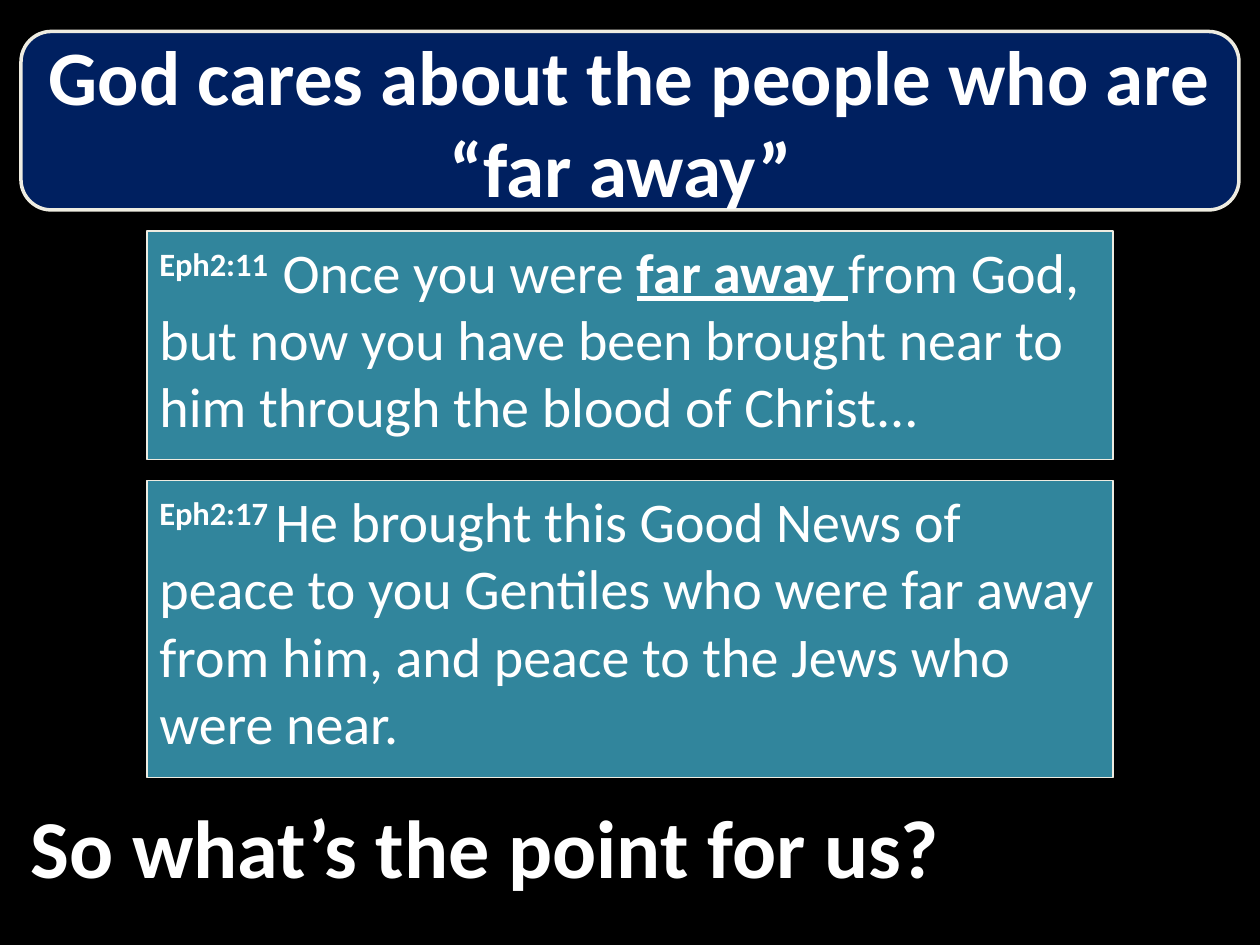
from pptx import Presentation
from pptx.dml.color import RGBColor
from pptx.enum.shapes import MSO_SHAPE as Shape
from pptx.enum.text import MSO_ANCHOR as Anchor, PP_ALIGN as Align
from pptx.util import Pt

COLORS = {
    "background": "000000",
    "banner": "002060",
    "verse": "31859C",
    "border": "EEECE1",
    "text": "FFFFFF",
}
FONT = "Calibri"


def color(name):
    return RGBColor.from_string(COLORS[name])


def add_box(slide, kind, box, fill=None, line_width=0):
    shape = slide.shapes.add_shape(kind, *(Pt(length) for length in box))
    shape.shadow.inherit = False
    if fill:
        shape.fill.solid()
        shape.fill.fore_color.rgb = color(fill)
        shape.line.color.rgb = color("border")
        shape.line.width = Pt(line_width)
    else:
        shape.fill.background()
        shape.line.fill.background()
    shape.text_frame.word_wrap = True
    return shape


def style_paragraph(paragraph, size, align, bold):
    paragraph.alignment = align
    paragraph.font.name = FONT
    paragraph.font.size = Pt(size)
    paragraph.font.bold = bold
    paragraph.font.color.rgb = color("text")


def add_callout(slide, box, text, size, fill=None, line_width=0):
    shape = add_box(slide, Shape.ROUNDED_RECTANGULAR_CALLOUT, box, fill, line_width)
    for index, value in enumerate((-0.22, 0.5, 0.17)):
        shape.adjustments[index] = value
    shape.text_frame.vertical_anchor = Anchor.MIDDLE
    paragraph = shape.text_frame.paragraphs[0]
    paragraph.add_run().text = text
    style_paragraph(paragraph, size, Align.CENTER, True)


def add_verse(slide, box, reference, parts):
    shape = add_box(slide, Shape.RECTANGLE, box, "verse", 0.75)
    shape.text_frame.vertical_anchor = Anchor.TOP
    paragraph = shape.text_frame.paragraphs[0]
    style_paragraph(paragraph, 32, Align.LEFT, False)
    run = paragraph.add_run()
    run.text = reference
    run.font.bold = True
    run._r.get_or_add_rPr().set("baseline", "30000")
    for text, emphasized in parts:
        run = paragraph.add_run()
        run.text = text
        if emphasized:
            run.font.bold = True
            run.font.underline = True


def main():
    presentation = Presentation()
    presentation.slide_width, presentation.slide_height = Pt(720), Pt(540)
    slide = presentation.slides.add_slide(presentation.slide_layouts[6])
    slide.background.fill.solid()
    slide.background.fill.fore_color.rgb = color("background")

    add_callout(slide, (-6, 438, 567, 90), "So what’s the point for us?", 47)
    add_callout(slide, (12, 18, 696, 102),
                "God cares about the people who are “far away” ", 44, "banner", 2)

    verses = [
        (130.5, "Eph2:11  ", [
            ("Once you were ", False),
            ("far away ", True),
            ("from God, but now you have been brought near to him "
             "through the blood of Christ...", False),
        ]),
        (170, "Eph2:17 ", [
            ("He brought this Good News of peace to you Gentiles who were "
             "far away from him, and peace to the Jews who were near.", False),
        ]),
    ]
    top, gap = 132, 12
    for height, reference, parts in verses:
        add_verse(slide, (84, top, 552, height), reference, parts)
        top += height + gap

    presentation.save("out.pptx")


if __name__ == "__main__":
    main()
